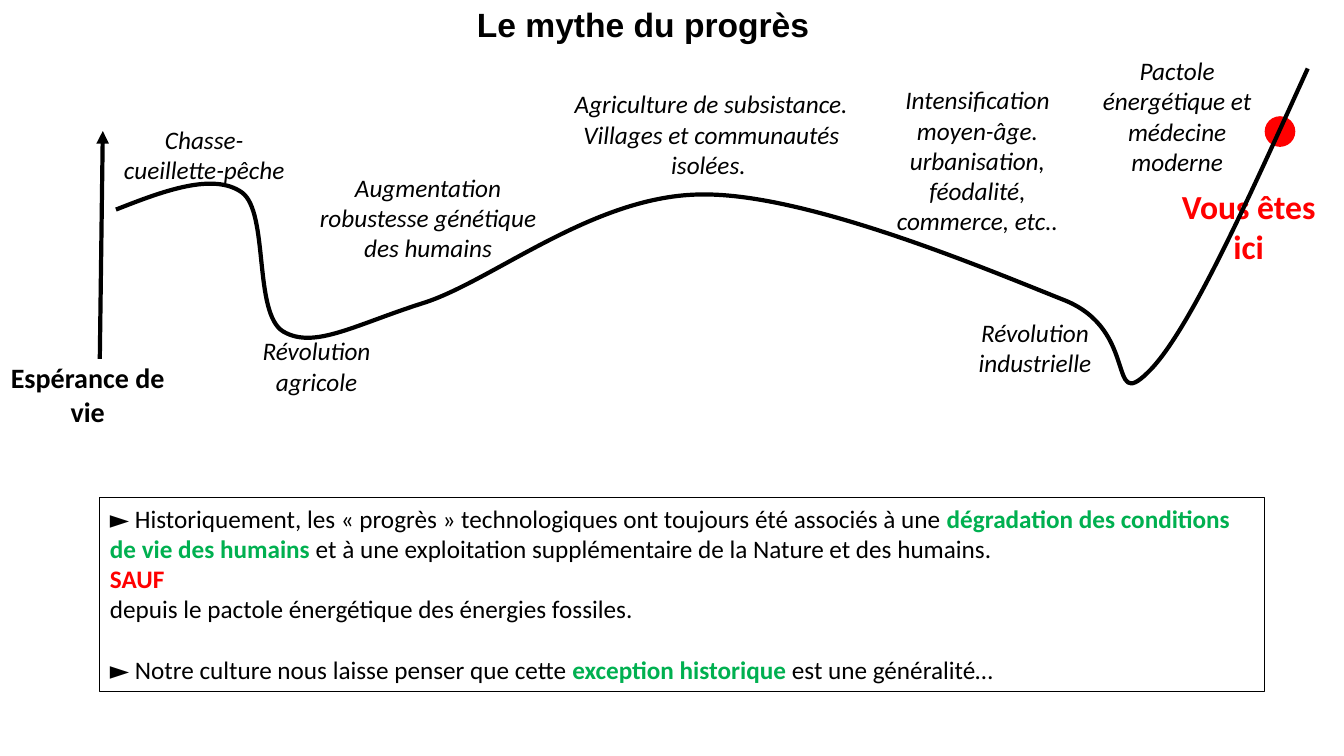
from dataclasses import dataclass

from lxml import etree
from pptx import Presentation
from pptx.dml.color import RGBColor
from pptx.enum.shapes import MSO_CONNECTOR, MSO_SHAPE
from pptx.enum.text import MSO_ANCHOR, MSO_AUTO_SIZE, PP_ALIGN
from pptx.oxml.ns import qn
from pptx.util import Inches, Pt

STRAIGHT = MSO_CONNECTOR.STRAIGHT
OVAL = MSO_SHAPE.OVAL
CENTER, LEFT = PP_ALIGN.CENTER, PP_ALIGN.LEFT
TOP = MSO_ANCHOR.TOP
NO_AUTOFIT = MSO_AUTO_SIZE.NONE

BLACK, RED, GREEN = "000000", "FF0000", "00B050"


@dataclass
class Label:
    text: str
    left: float
    top: float
    width: float
    height: float
    size: int = 18
    color: str = BLACK
    bold: bool = False
    italic: bool = True


@dataclass
class Passage:
    text: str
    color: str = BLACK
    bold: bool = False


LABELS = [
    Label("Espérance de vie", 0, 3.53, 1.74, 0.77, 20, BLACK, True, False),
    Label("Révolution agricole", 2.4, 3.28, 1.48, 0.71),
    Label("Augmentation robustesse génétique des humains", 2.95, 1.66, 2.59, 1.01),
    Label("Intensification moyen-âge. urbanisation, féodalité, commerce, etc..",
          8.7, 0.79, 1.99, 1.62),
    Label("Chasse- cueillette-pêche", 1.03, 1.18, 1.99, 0.71),
    Label("Agriculture de subsistance. Villages et communautés isolées. ",
          5.53, 0.83, 3.05, 1.01),
    Label("Révolution industrielle", 9.27, 3.1, 1.99, 0.71),
    Label("Pactole énergétique et médecine moderne", 10.78, 0.5, 1.79, 1.31),
    Label("Vous êtes ici", 11.53, 1.79, 1.71, 0.91, 24, RED, True, False),
]

# Each Bézier segment: two control points, then its end point
CURVE_START = (1.15, 2.08)
CURVE_SEGMENTS = [
    ((1.63, 1.89), (2.12, 1.71), (2.4, 1.91)),
    ((2.67, 2.11), (2.51, 3.11), (2.81, 3.29)),
    ((3.12, 3.47), (3.52, 3.22), (4.22, 3)),
    ((4.91, 2.77), (5.91, 1.93), (6.97, 1.93)),
    ((8.02, 1.92), (9.83, 2.69), (10.56, 2.98)),
    ((11.3, 3.28), (10.98, 4.09), (11.38, 3.7)),
    ((11.78, 3.32), (12.37, 2), (12.97, 0.68)),
]
CURVE_HEIGHT = 3.13

CONCLUSION = [
    [Passage("► Historiquement, les «\u00a0progrès\u00a0» technologiques ont toujours été associés à une "),
     Passage("dégradation des conditions de vie des humains", GREEN, True),
     Passage(" et à une exploitation supplémentaire de la Nature et des humains.")],
    [Passage("SAUF", RED, True)],
    [Passage("depuis le pactole énergétique des énergies fossiles.")],
    [Passage("► Notre culture nous laisse penser que cette "),
     Passage("exception historique ", GREEN, True),
     Passage("est une généralité…")],
]


def rgb(color: str) -> RGBColor:
    return RGBColor.from_string(color)


def style_font(font, name: str, size: int, color: str, bold: bool, italic: bool = False) -> None:
    font.name, font.size, font.bold, font.italic = name, Pt(size), bold, italic
    font.color.rgb = rgb(color)


def style_line(shape, color: str, width: float) -> None:
    shape.line.color.rgb = rgb(color)
    shape.line.width = Pt(width)


def place(shape, left: float, top: float, width: float, height: float) -> None:
    shape.left, shape.top = Inches(left), Inches(top)
    shape.width, shape.height = Inches(width), Inches(height)


def set_frame(frame, wrap: bool = True) -> None:
    frame.auto_size = NO_AUTOFIT
    frame.word_wrap = wrap
    frame.vertical_anchor = TOP


def add_label(slide, label: Label) -> None:
    box = slide.shapes.add_textbox(Inches(label.left), Inches(label.top),
                                   Inches(label.width), Inches(label.height))
    box.text_frame.text = label.text
    set_frame(box.text_frame)
    paragraph = box.text_frame.paragraphs[0]
    paragraph.alignment = CENTER
    style_font(paragraph.runs[0].font, "Calibri", label.size, label.color,
               label.bold, label.italic)


def add_life_axis(slide) -> None:
    axis = slide.shapes.add_connector(STRAIGHT, Inches(0.99), Inches(3.56),
                                      Inches(1.02), Inches(1.3))
    style_line(axis, BLACK, 3)
    etree.SubElement(axis.line._get_or_add_ln(), qn("a:tailEnd"), type="triangle")
    etree.SubElement(axis._element.spPr, qn("a:effectLst"))


def to_emu(point: tuple[float, float]) -> tuple[int, int]:
    return Inches(point[0]), Inches(point[1])


def add_life_curve(slide) -> None:
    builder = slide.shapes.build_freeform(*to_emu(CURVE_START))
    builder.add_line_segments(
        [to_emu(point) for segment in CURVE_SEGMENTS for point in segment], close=False)
    curve = builder.convert_to_shape()

    # Turn every three straight steps into one Bézier segment
    outline = next(curve._element.iter(qn("a:path")))
    steps = outline.findall(qn("a:lnTo"))
    for first in range(0, len(steps), 3):
        bezier = etree.SubElement(outline, qn("a:cubicBezTo"))
        for step in steps[first:first + 3]:
            bezier.append(step[0])
            outline.remove(step)

    # The frame fits the drawn curve, not its control points
    curve.height = Inches(CURVE_HEIGHT)
    outline.set("h", str(Inches(CURVE_HEIGHT)))
    curve.shadow.inherit = False
    curve.fill.background()
    style_line(curve, BLACK, 3)


def add_present_dot(slide) -> None:
    dot = slide.shapes.add_shape(OVAL, Inches(12.55), Inches(1.16), Inches(0.29), Inches(0.29))
    dot.shadow.inherit = False
    dot.fill.solid()
    dot.fill.fore_color.rgb = rgb(RED)
    style_line(dot, RED, 1)


def fill_title(title) -> None:
    place(title, 4.63, -0.01, 3.59, 0.5)
    title.text_frame.text = "Le mythe du progrès"
    set_frame(title.text_frame, wrap=False)
    paragraph = title.text_frame.paragraphs[0]
    paragraph.alignment = LEFT
    style_font(paragraph.runs[0].font, "Arial", 24, BLACK, True)


def fill_conclusion(body) -> None:
    place(body, 0.99, 4.94, 11.55, 1.92)
    style_line(body, BLACK, 0.75)
    frame = body.text_frame
    set_frame(frame)
    for index, passages in enumerate(CONCLUSION):
        paragraph = frame.add_paragraph() if index else frame.paragraphs[0]
        properties = paragraph._p.get_or_add_pPr()
        properties.set("marL", "0")
        properties.set("indent", "0")
        etree.SubElement(properties, qn("a:buNone"))
        paragraph.alignment = LEFT
        paragraph.line_spacing = 1.0
        last = index == len(CONCLUSION) - 1
        paragraph.space_before = Pt(22 if last else 0)
        for passage in passages:
            run = paragraph.add_run()
            run.text = passage.text
            style_font(run.font, "Calibri", 18, passage.color, passage.bold)


def main() -> None:
    deck = Presentation()
    deck.slide_width, deck.slide_height = Inches(13.33), Inches(7.5)
    slide = deck.slides.add_slide(deck.slide_layouts[1])

    # Title and conclusion
    fill_title(slide.shapes.title)
    fill_conclusion(slide.placeholders[1])

    # Life expectancy through history
    add_life_axis(slide)
    for label in LABELS:
        add_label(slide, label)
    add_present_dot(slide)
    add_life_curve(slide)

    deck.save("out.pptx")


if __name__ == "__main__":
    main()
